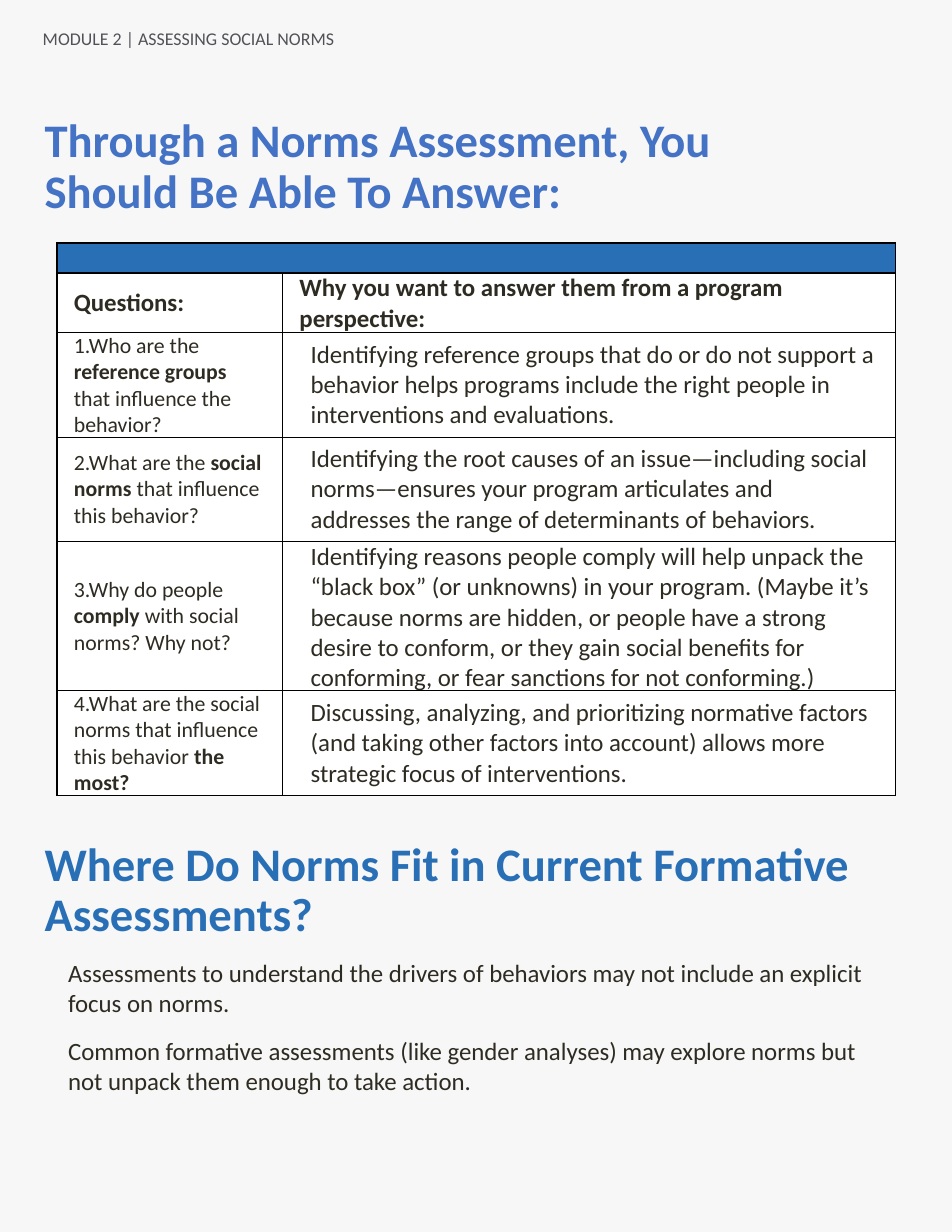
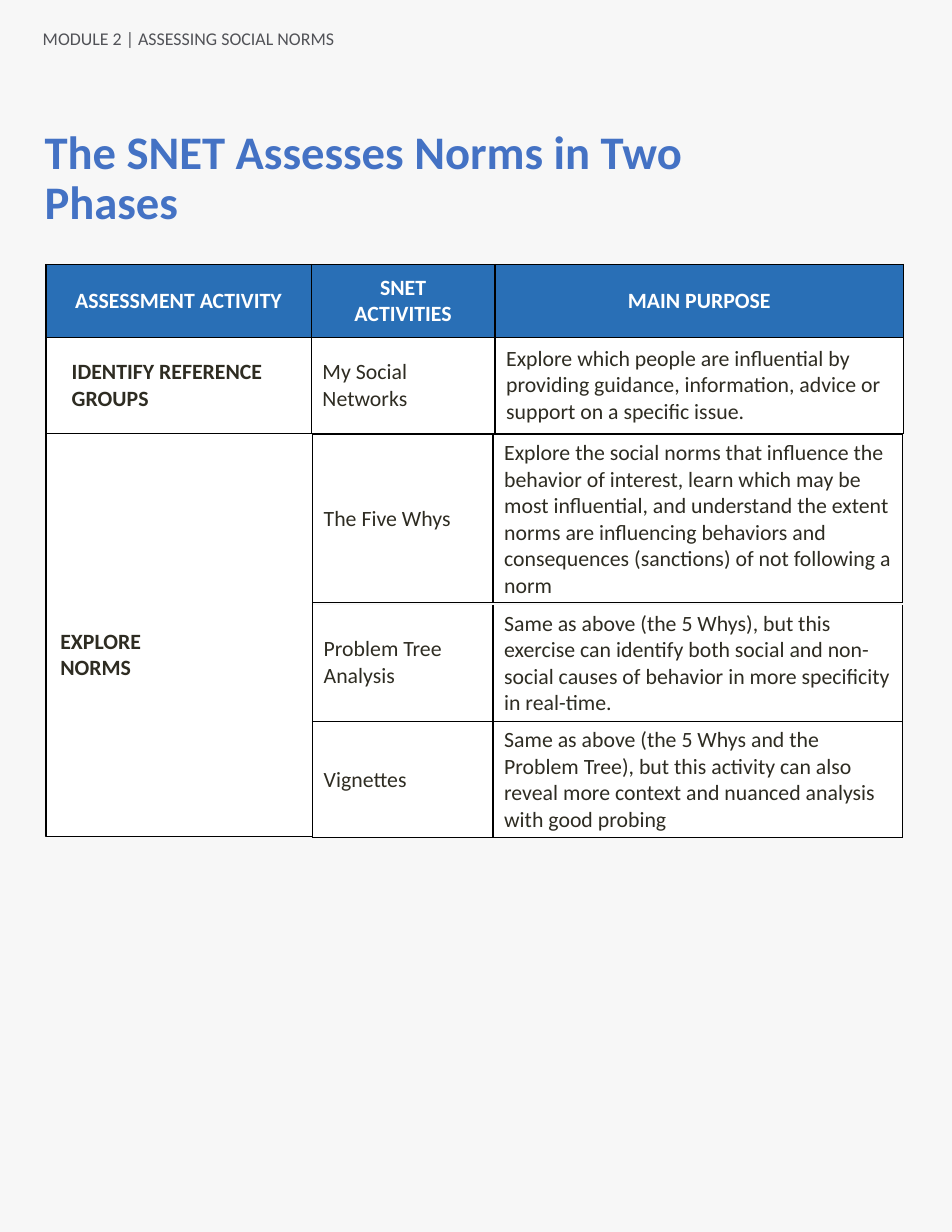
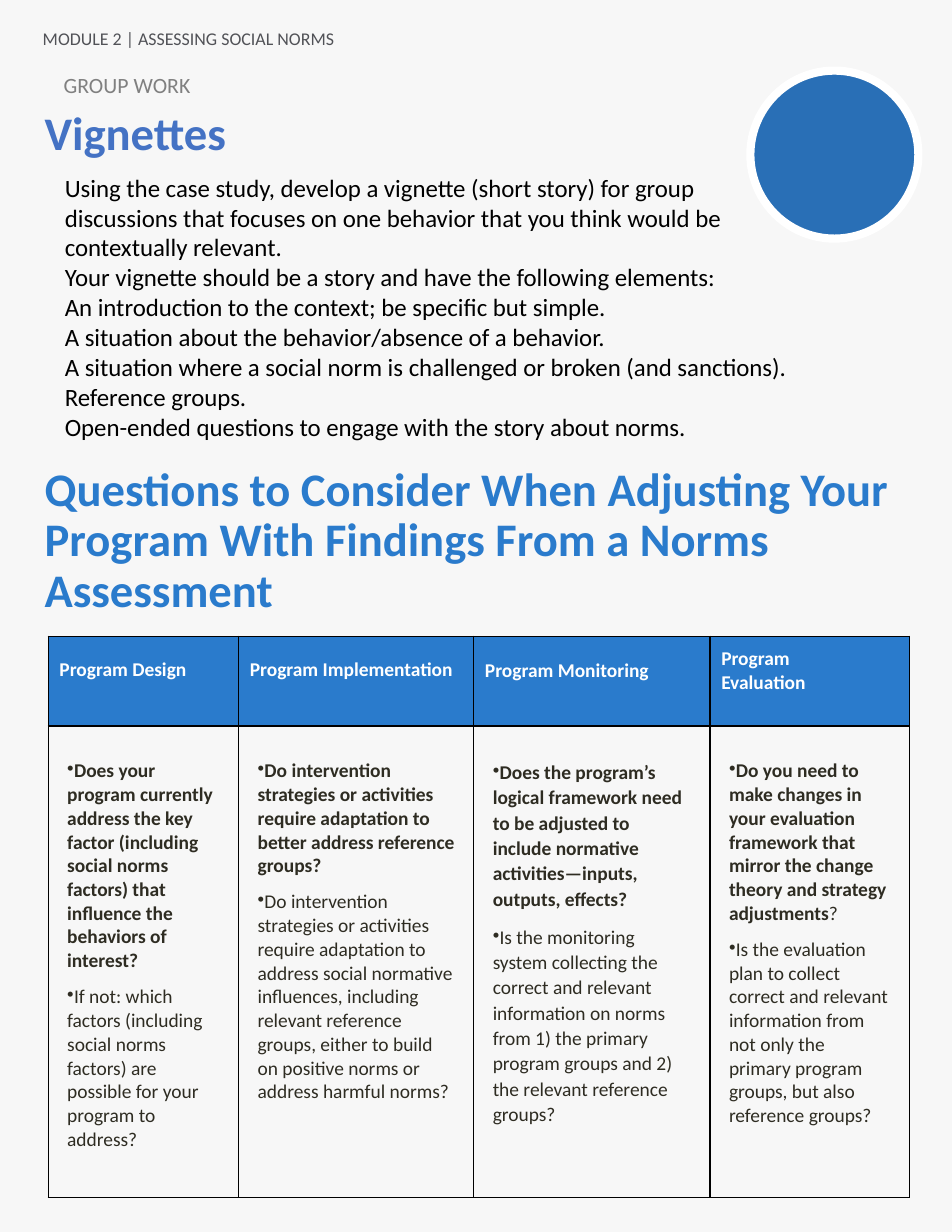
from lxml import etree
from pptx import Presentation
from pptx.dml.color import RGBColor
from pptx.enum.shapes import MSO_SHAPE
from pptx.enum.text import MSO_ANCHOR, PP_ALIGN
from pptx.oxml.ns import qn
from pptx.util import Pt

RECTANGLE, OVAL = MSO_SHAPE.RECTANGLE, MSO_SHAPE.OVAL
TOP, MIDDLE = MSO_ANCHOR.TOP, MSO_ANCHOR.MIDDLE
LEFT, CENTER = PP_ALIGN.LEFT, PP_ALIGN.CENTER

# Shared look
FONT = "Calibri"
PAPER, WHITE, BLACK = "F7F7F7", "FFFFFF", "000000"
INK, HEADER_GRAY, LABEL_GRAY = "2E2C22", "515257", "808080"
TITLE_BLUE, BLUE, BRIGHT_BLUE = "4472C4", "296FB6", "2A7BCC"
TITLE_LEFT = 21.6
INSETS = (7.2, 3.6, 7.2, 3.6)


def color(value):
    return RGBColor.from_string(value)


# Text: "**" switches bold on and off, a newline is a line break
def write_para(para, text, size, ink=INK, bold=False, align=LEFT,
               indent=0, bullet=None, spacing=None, after=None):
    props = para._p.get_or_add_pPr()
    props.set("marL", str(Pt(indent)))
    props.set("indent", "0")
    if bullet:
        etree.SubElement(props, qn("a:buChar")).set("char", bullet)
    para.alignment = align
    if spacing:
        para.line_spacing = spacing
    if after is not None:
        para.space_after = Pt(after)
    for number, part in enumerate(text.split("**")):
        for row, line in enumerate(part.split("\n")):
            if row:
                para.add_line_break()
            if line:
                span = para.add_run()
                span.text = line
                font = span.font
                font.name, font.size = FONT, Pt(size)
                font.bold = bold or number % 2 == 1
                font.color.rgb = color(ink)


def write_paras(frame, texts, size, **style):
    for number, text in enumerate(texts):
        para = frame.add_paragraph() if number else frame.paragraphs[0]
        write_para(para, text, size, **style)


def set_insets(target, insets):
    (target.margin_left, target.margin_top,
     target.margin_right, target.margin_bottom) = map(Pt, insets)


def add_text(page, left, top, width, height, texts, size, **style):
    box = page.shapes.add_textbox(Pt(left), Pt(top), Pt(width), Pt(height))
    box.text_frame.word_wrap = True
    set_insets(box.text_frame, INSETS)
    write_paras(box.text_frame, texts, size, **style)


def add_title(page, top, width, height, text, ink=TITLE_BLUE, spacing=0.9):
    add_text(page, TITLE_LEFT, top, width, height, [text], 30,
             ink=ink, bold=True, spacing=spacing)


def add_page(deck):
    page = deck.slides.add_slide(deck.slide_layouts[6])
    add_text(page, 20.4, 14.4, 402, 21.6,
             ["MODULE 2 | ASSESSING SOCIAL NORMS"], 11.5, ink=HEADER_GRAY)
    return page


def add_figure(page, kind, left, top, width, height, fill, line, weight):
    figure = page.shapes.add_shape(kind, Pt(left), Pt(top), Pt(width), Pt(height))
    figure.shadow.inherit = False
    figure.fill.solid()
    figure.fill.fore_color.rgb = color(fill)
    figure.line.color.rgb = color(line)
    figure.line.width = Pt(weight)


# Tables
def set_borders(cell, sides):
    props = cell._tc.get_or_add_tcPr()
    for side in "LRTB":
        line = etree.SubElement(props, qn("a:ln" + side), w=str(Pt(1)))
        if side in sides:
            fill = etree.SubElement(line, qn("a:solidFill"))
            etree.SubElement(fill, qn("a:srgbClr"), val=BLACK)
        else:
            etree.SubElement(line, qn("a:noFill"))


def add_table(page, left, top, widths, heights, sides="LRTB"):
    frame = page.shapes.add_table(len(heights), len(widths), Pt(left), Pt(top),
                                  Pt(sum(widths)), Pt(sum(heights)))
    table = frame.table
    table.first_row = table.horz_banding = False
    for column, width in zip(table.columns, widths):
        column.width = Pt(width)
    for row, height in zip(table.rows, heights):
        row.height = Pt(height)
    for cell in table.iter_cells():
        set_borders(cell, sides)
    return table


def fill_cell(cell, texts, size, fill=WHITE, insets=INSETS, anchor=MIDDLE, **style):
    if fill:
        cell.fill.solid()
        cell.fill.fore_color.rgb = color(fill)
    else:
        cell.fill.background()
    set_insets(cell, insets)
    cell.vertical_anchor = anchor
    write_paras(cell.text_frame, texts, size, **style)


# Slide 1
QUESTIONS = [
    ("1.Who are the **reference groups** that influence the behavior?",
     "Identifying reference groups that do or do not support a behavior helps "
     "programs include the right people in interventions and evaluations."),
    ("2.What are the **social norms** that influence this behavior?",
     "Identifying the root causes of an issue—including social norms—ensures your "
     "program articulates and addresses the range of determinants of behaviors."),
    ("3.Why do people **comply** with social norms? Why not?",
     "Identifying reasons people comply will help unpack the “black box” (or "
     "unknowns) in your program. (Maybe it’s because norms are hidden, or people "
     "have a strong desire to conform, or they gain social benefits for "
     "conforming, or fear sanctions for not conforming.)"),
    ("4.What are the social norms that influence this behavior** the most?**",
     "Discussing, analyzing, and prioritizing normative factors (and taking other "
     "factors into account) allows more strategic focus of interventions."),
]


def build_questions(deck):
    page = add_page(deck)
    add_title(page, 72, 510, 21.6,
              "Through a Norms Assessment, You Should Be Able To Answer:")

    insets = (10.8, 0, 10.8, 0)
    table = add_table(page, 36.7, 156.2, [145, 394], [18, 36.7, 67, 67, 91.5, 67])
    band = table.cell(0, 0)
    band.merge(table.cell(0, 1))
    fill_cell(band, [], 16, fill=BLUE, insets=insets)
    for column in (0, 1):
        para = table.cell(0, column).text_frame.paragraphs[0]
        etree.SubElement(para._p, qn("a:endParaRPr"), sz="1600")
    heads = ["Questions:", "Why you want to answer them from a program perspective:"]
    for column, head in enumerate(heads):
        fill_cell(table.cell(1, column), [head], 16, insets=insets, bold=True)
    for row, (question, reason) in enumerate(QUESTIONS, 2):
        fill_cell(table.cell(row, 0), [question], 14, insets=insets)
        fill_cell(table.cell(row, 1), [reason], 16, insets=insets, indent=7.2)

    add_title(page, 537, 590, 171,
              "Where Do Norms Fit in Current Formative Assessments?", ink=BLUE)
    add_text(page, 36.7, 612, 539, 97, [
        "Assessments to understand the drivers of behaviors may not include an "
        "explicit focus on norms.",
        "Common formative assessments (like gender analyses) may explore norms but "
        "not unpack them enough to take action.",
    ], 16, after=12)


# Slide 2: top, height, borders, activity, purpose
ACTIVITIES = [
    (279.4, 108, "LRTB", "The Five Whys",
     "Explore the social norms that influence the behavior of interest, learn which "
     "may be most influential, and understand the extent norms are influencing "
     "behaviors and consequences (sanctions) of not following a norm"),
    (388.8, 72, "LR", "Problem Tree Analysis",
     "Same as above (the 5 Whys), but this exercise can identify both social and "
     "non-social causes of behavior in more specificity in real-time."),
    (463.7, 74.9, "LRTB", "Vignettes",
     "Same as above (the 5 Whys and the Problem Tree), but this activity can also "
     "reveal more context and nuanced analysis with good probing"),
]


def build_phases(deck):
    page = add_page(deck)
    add_title(page, 79.2, 510, 41.8, "The SNET Assesses Norms in Two Phases")

    table = add_table(page, 29.5, 170, [170.6, 118.1, 262.8], [46.8, 61.9])
    heads = ["ASSESSMENT ACTIVITY", "SNET\nACTIVITIES", "MAIN PURPOSE"]
    for column, head in enumerate(heads):
        fill_cell(table.cell(0, column), [head], 14, fill=BLUE, ink=WHITE,
                  bold=True, align=CENTER)
    fill_cell(table.cell(1, 0), ["IDENTIFY REFERENCE GROUPS"], 14,
              bold=True, indent=9.4)
    fill_cell(table.cell(1, 1), ["My Social Networks"], 14)
    fill_cell(table.cell(1, 2), [
        "Explore which people are influential by providing guidance, information, "
        "advice or support on a specific issue."], 14)

    add_figure(page, RECTANGLE, 29.5, 278.6, 171.4, 259.2, WHITE, BLACK, 1)
    add_text(page, 31.7, 400, 90, 41, ["EXPLORE NORMS"], 14, bold=True)
    for top, height, sides, activity, purpose in ACTIVITIES:
        table = add_table(page, 200.9, top, [116, 263.5], [height], sides)
        fill_cell(table.cell(0, 0), [activity], 14)
        fill_cell(table.cell(0, 1), [purpose], 14)


# Slide 3: head, head insets, head anchor, line spacing, questions
PROGRAM_STEPS = [
    ("Program Design", (7.2, 7.2, 7.2, 21.6), MIDDLE, None, [
        "**Does your program currently address the key factor (including social norms "
        "factors) that influence the behaviors of interest?**",
        "If not: which factors (including social norms factors) are possible for your "
        "program to address?"]),
    ("Program Implementation", (7.2, 7.2, 0, 21.6), MIDDLE, None, [
        "**Do intervention strategies or activities require adaptation to better "
        "address reference groups?**",
        "Do intervention strategies or activities require adaptation to address social "
        "normative influences, including relevant reference groups, either to build "
        "on positive norms or address harmful norms?"]),
    ("Program Monitoring", (7.2, 7.2, 7.2, 21.6), MIDDLE, 1.07, [
        "**Does the program’s logical framework need to be adjusted to include "
        "normative activities—inputs, outputs, effects?**",
        "Is the monitoring system collecting the correct and relevant information on "
        "norms from 1) the primary program groups and 2) the relevant reference "
        "groups?"]),
    ("Program Evaluation", (7.2, 7.2, 21.6, 0), TOP, None, [
        "**Do you need to make changes in your evaluation framework that mirror the "
        "change theory and strategy adjustments**?",
        "Is the evaluation plan to collect correct and relevant information from not "
        "only the primary program groups, but also reference groups?"]),
]


def build_vignettes(deck):
    page = add_page(deck)
    add_text(page, TITLE_LEFT, 42.5, 384.5, 19.4, ["GROUP WORK"], 14,
             ink=LABEL_GRAY, indent=12.2)
    add_title(page, 63.4, 149, 44, "Vignettes", spacing=None)
    add_text(page, 34.6, 107.3, 490, 181.4, [
        "Using the case study, develop a vignette (short story) for group discussions "
        "that focuses on one behavior that you think would be contextually relevant.",
        "Your vignette should be a story and have the following elements:",
        "An introduction to the context; be specific but simple.",
        "A situation about the behavior/absence of a behavior.",
        "A situation where a social norm is challenged or broken (and sanctions).",
        "Reference groups.",
        "Open-ended questions to engage with the story about norms.",
    ], 16, ink=BLACK)
    add_figure(page, OVAL, 482.4, 45.4, 108, 108, BLUE, WHITE, 5.25)

    add_title(page, 296, 582, 105, "Questions to Consider When Adjusting Your Program "
              "With Findings From a Norms Assessment", ink=BRIGHT_BLUE)
    table = add_table(page, 31, 409, [122.4, 151.2, 151.9, 128.2], [57.6, 303])
    for column, (head, insets, anchor, spacing, questions) in enumerate(PROGRAM_STEPS):
        fill_cell(table.cell(0, column), [head], 12.5, fill=BRIGHT_BLUE, insets=insets,
                  anchor=anchor, ink=WHITE, bold=True, spacing=spacing)
        fill_cell(table.cell(1, column), questions, 12.5, fill=None,
                  insets=(12.2, 21.6, 12.2, 21.6), anchor=TOP, bullet="•",
                  spacing=spacing, after=8)


def main():
    deck = Presentation()
    deck.slide_width, deck.slide_height = Pt(612), Pt(792)
    backdrop = deck.slide_master.background.fill
    backdrop.solid()
    backdrop.fore_color.rgb = color(PAPER)
    build_questions(deck)
    build_phases(deck)
    build_vignettes(deck)
    deck.save("out.pptx")


if __name__ == "__main__":
    main()
